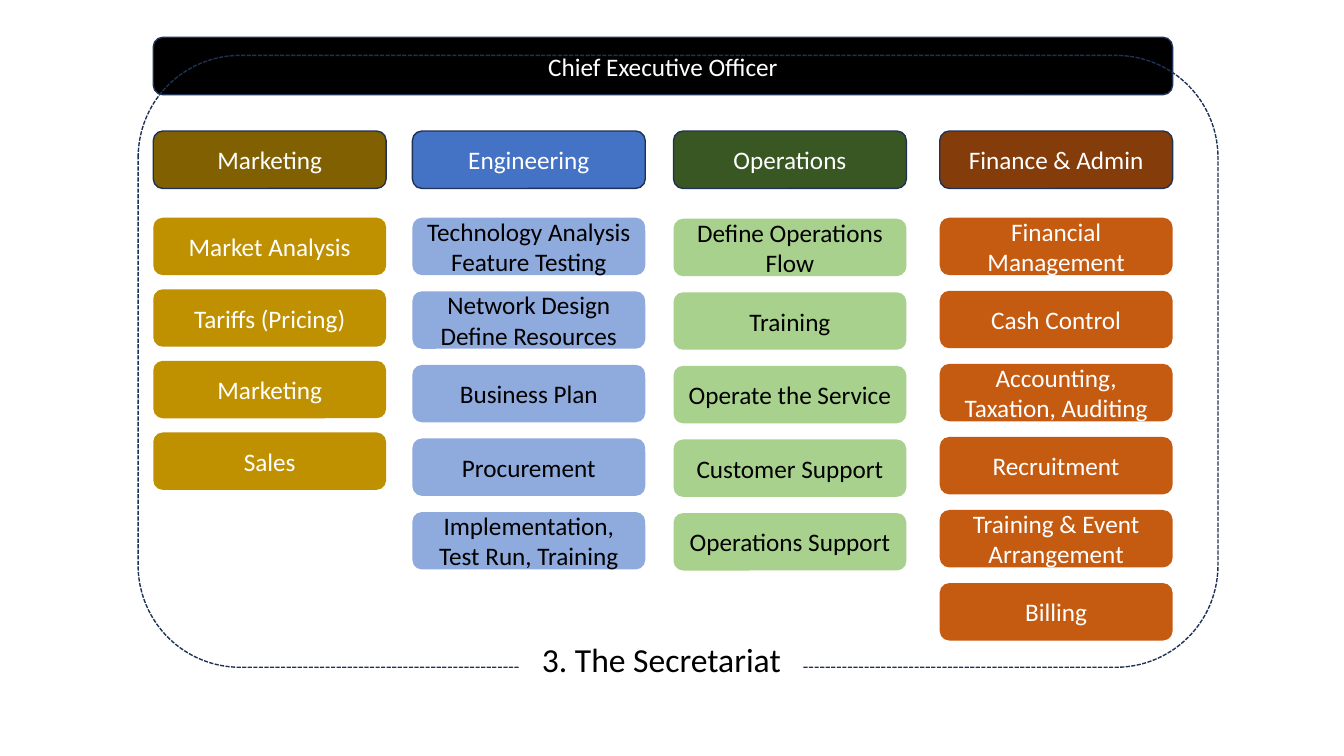
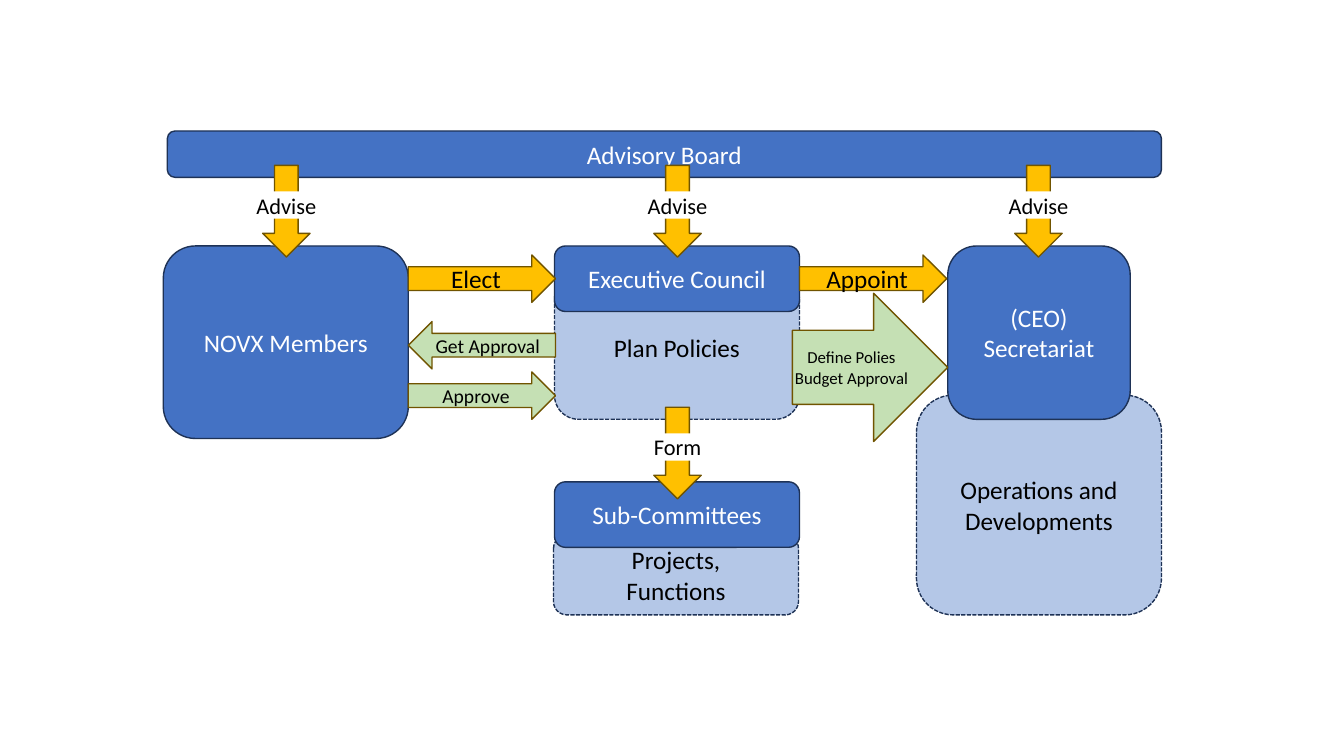
import pptx
import pptx.util
import pptx.dml.color
import pptx.enum.dml
import pptx.enum.shapes
import pptx.enum.text
from dataclasses import dataclass

Inches = pptx.util.Inches
Kind = pptx.enum.shapes.MSO_SHAPE


@dataclass(frozen=True)
class Theme:
    font: str = "Calibri"
    title: int = 24
    body: int = 18
    label: int = 16
    small: int = 14
    tiny: int = 12
    white: str = "FFFFFF"
    black: str = "000000"
    edge: str = "1E3256"
    blue: str = "4472C4"
    sky: str = "8FAADC"
    pale: str = "B4C7E7"
    olive: str = "806000"
    gold: str = "BF9000"
    forest: str = "385723"
    leaf: str = "A9D18E"
    brown: str = "843C0B"
    rust: str = "C55A11"
    amber: str = "FFC000"
    mint: str = "C5E0B4"
    rim: str = "705400"


T = Theme()

# Slide 1: head, left, first top, step, head fill, task fill, task ink, tasks
UNITS = [
    ("Marketing", 1.52, 2.16, 0.71, T.olive, T.gold, T.white,
     ["Market Analysis", "Tariffs (Pricing)", "Marketing", "Sales"]),
    ("Engineering", 4.09, 2.16, 0.73, T.blue, T.sky, T.black,
     ["Technology Analysis\nFeature Testing", "Network Design\nDefine Resources",
      "Business Plan", "Procurement", "Implementation, Test Run, Training"]),
    ("Operations", 6.68, 2.17, 0.73, T.forest, T.leaf, T.black,
     ["Define Operations Flow", "Training", "Operate the Service",
      "Customer Support", "Operations Support"]),
    ("Finance & Admin", 9.32, 2.16, 0.725, T.brown, T.rust, T.white,
     ["Financial Management", "Cash Control", "Accounting, Taxation, Auditing",
      "Recruitment", "Training & Event Arrangement", "Billing"]),
]
CARD_W, CARD_H = 2.31, 0.57

# Slide 2: text and box (left, top, width, height)
DUTIES = [
    ("Projects,\nFunctions", (5.49, 5.31, 2.43, 0.79)),
    ("Plan Policies", (5.5, 2.73, 2.43, 1.43)),
    ("Operations and Developments", (9.09, 3.92, 2.43, 2.18)),
]
BODIES = [
    ("Executive Council", (5.5, 2.44, 2.43, 0.65)),
    ("NOVX Members", (1.62, 2.44, 2.43, 1.91)),
    ("(CEO)\nSecretariat", (9.4, 2.44, 1.81, 1.72)),
    ("Sub-Committees", (5.5, 4.78, 2.43, 0.65)),
    ("Advisory Board", (1.66, 1.3, 9.86, 0.46)),
]
# text, arrow kind, left, top, fill, size
FLOWS = [
    ("Elect", Kind.RIGHT_ARROW, 4.05, 2.53, T.amber, T.body),
    ("Appoint", Kind.RIGHT_ARROW, 7.93, 2.53, T.amber, T.body),
    ("Approve", Kind.RIGHT_ARROW, 4.05, 3.69, T.mint, T.small),
    ("Get Approval", Kind.LEFT_ARROW, 4.05, 3.19, T.mint, T.small),
]
# text, centre, top
DROPS = [
    ("Advise", 2.84, 1.64),
    ("Advise", 6.72, 1.64),
    ("Advise", 10.3, 1.64),
    ("Form", 6.72, 4.04),
]


def rgb(code):
    return pptx.dml.color.RGBColor.from_string(code)


def write(shape, text, size=T.body, ink=T.white, inset=None):
    frame = shape.text_frame
    frame.word_wrap = True
    frame.vertical_anchor = pptx.enum.text.MSO_ANCHOR.MIDDLE
    if inset is not None:
        frame.margin_left = frame.margin_right = Inches(inset)
        frame.margin_top = frame.margin_bottom = Inches(inset)
    frame.text = text
    for para in frame.paragraphs:
        para.alignment = pptx.enum.text.PP_ALIGN.CENTER
        font = para.font
        font.name, font.size = T.font, pptx.util.Pt(size)
        font.color.rgb = rgb(ink)


def draw(shapes, box, text="", kind=Kind.ROUNDED_RECTANGLE, fill=None,
         line=None, dash=False, **style):
    shape = shapes.add_shape(kind, *map(Inches, box))
    shape.shadow.inherit = False
    if fill:
        shape.fill.solid()
        shape.fill.fore_color.rgb = rgb(fill)
    else:
        shape.fill.background()
    if line:
        shape.line.color.rgb = rgb(line)
        shape.line.width = pptx.util.Pt(1)
        if dash:
            shape.line.dash_style = pptx.enum.dml.MSO_LINE.SQUARE_DOT
    else:
        shape.line.fill.background()
    if text:
        write(shape, text, **style)


def chart_staff(shapes):
    for head, left, top, step, dark, tint, ink, tasks in UNITS:
        draw(shapes, (left, 1.3, CARD_W, CARD_H), head, fill=dark, line=T.edge)
        for row, task in enumerate(tasks):
            draw(shapes, (left, top + row * step, CARD_W, CARD_H), task,
                 fill=tint, ink=ink)
    left, right = UNITS[0][1], UNITS[-1][1] + CARD_W
    draw(shapes, (left, 0.37, right - left, CARD_H), "Chief Executive Officer",
         fill=T.black, line=T.edge)
    draw(shapes, (1.37, 0.55, 10.71, 6.07), line=T.edge, dash=True)
    draw(shapes, (5.16, 6.37, 2.8, 0.34), "3. The Secretariat",
         fill=T.white, ink=T.black, size=T.title)


def chart_roles(shapes):
    for text, box in DUTIES:
        draw(shapes, box, text, fill=T.pale, line=T.edge, dash=True, ink=T.black)
    for text, box in BODIES:
        draw(shapes, box, text, fill=T.blue, line=T.edge)
    for text, kind, left, top, fill, size in FLOWS:
        draw(shapes, (left, top, 1.46, 0.47), text, kind, fill, T.rim,
             ink=T.black, size=size)
    draw(shapes, (7.86, 2.91, 1.54, 1.47), "Define Polies\nBudget Approval",
         Kind.RIGHT_ARROW, T.mint, T.rim, ink=T.black, size=T.tiny, inset=0)
    for text, mid, top in DROPS:
        group = shapes.add_group_shape().shapes
        draw(group, (mid - 0.235, top, 0.47, 0.91), kind=Kind.DOWN_ARROW,
             fill=T.amber, line=T.rim)
        draw(group, (mid - 0.435, top + 0.26, 0.87, 0.27), text, Kind.RECTANGLE,
             T.white, ink=T.black, size=T.label, inset=0)


def main():
    deck = pptx.Presentation()
    deck.slide_width, deck.slide_height = Inches(13.33), Inches(7.5)
    for build in (chart_staff, chart_roles):
        build(deck.slides.add_slide(deck.slide_layouts[6]).shapes)
    deck.save("out.pptx")


if __name__ == "__main__":
    main()
